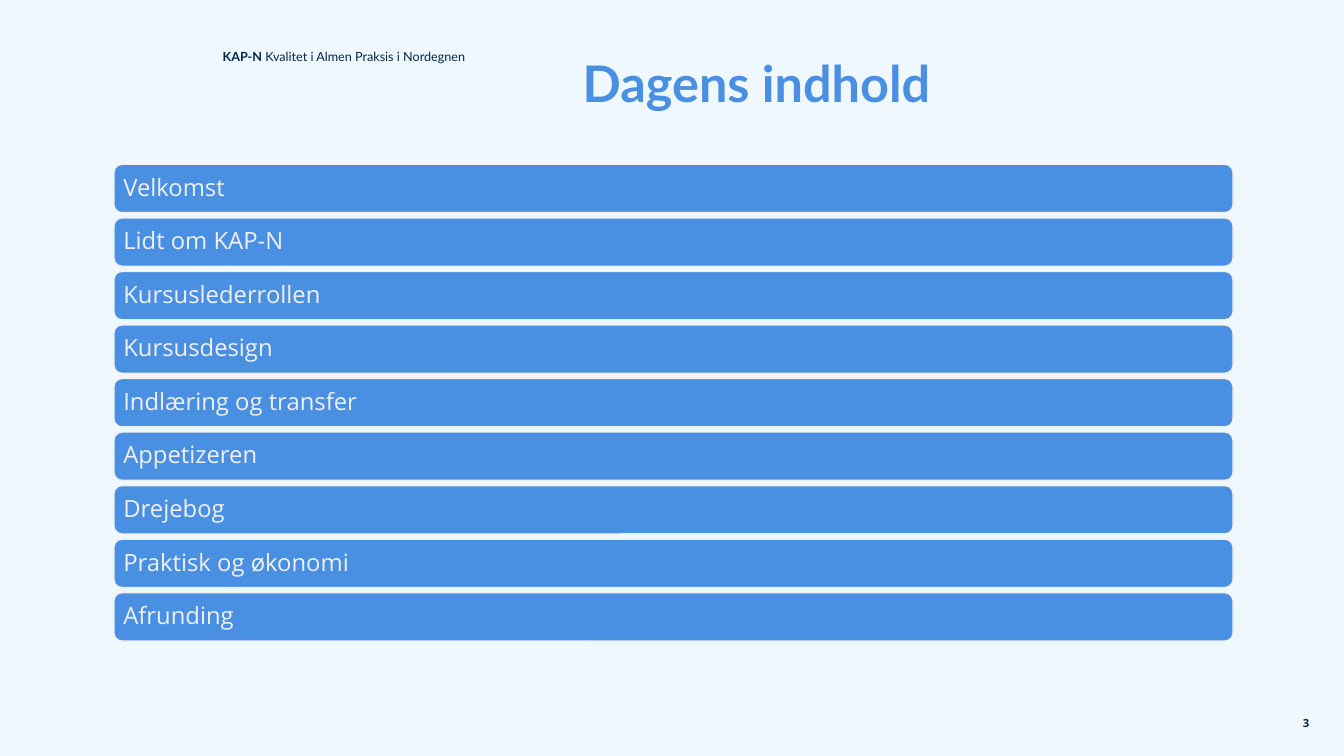
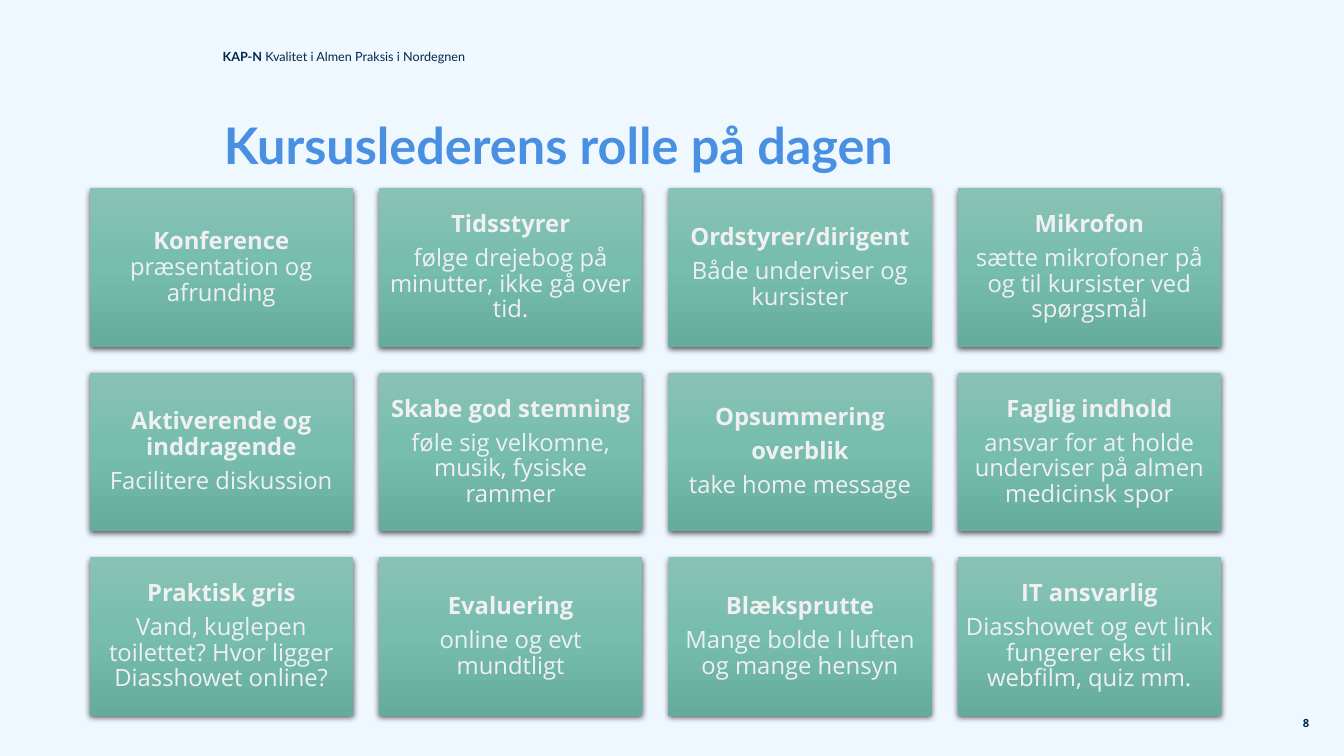
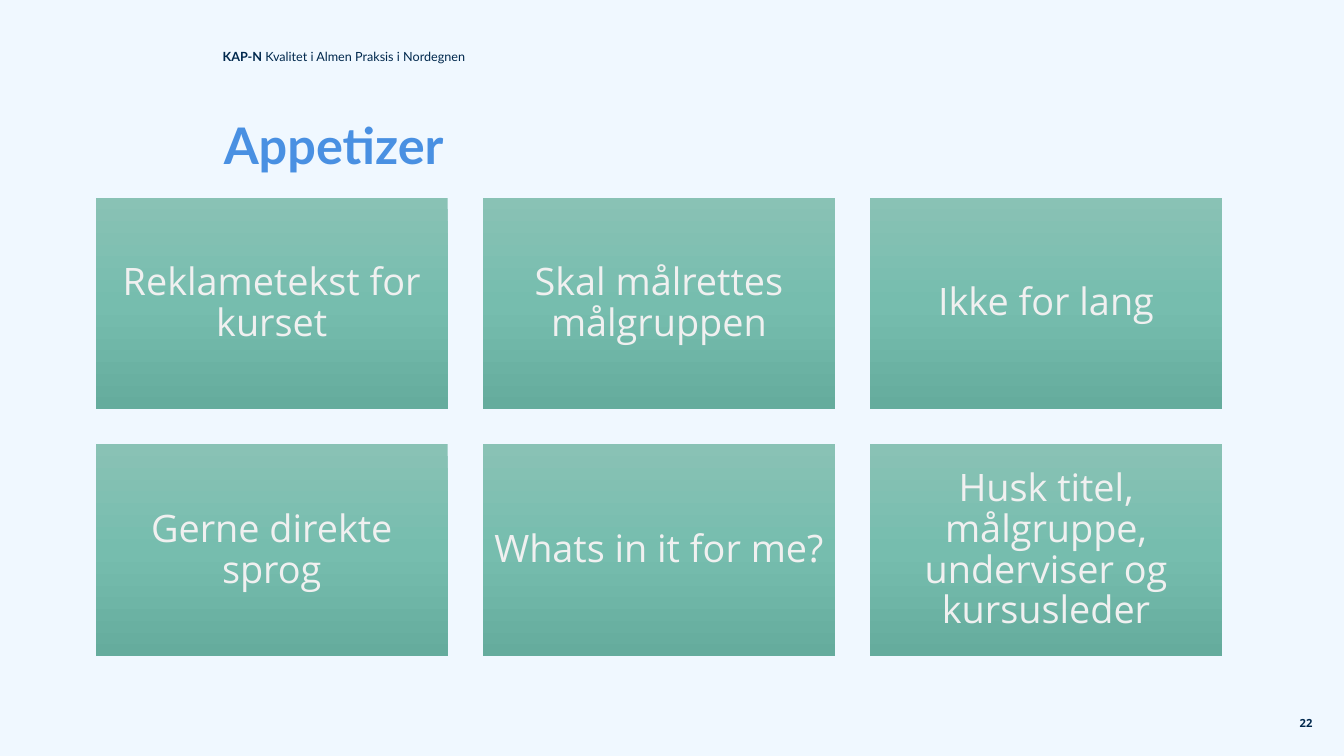
"""Build three course slides: agenda, the course leader's role and the appetizer."""
from copy import deepcopy

from pptx import Presentation
from pptx.dml.color import RGBColor
from pptx.enum.shapes import MSO_SHAPE as Shape
from pptx.enum.text import MSO_ANCHOR as Anchor, PP_ALIGN as Align
from pptx.oxml import parse_xml
from pptx.oxml.ns import nsdecls, qn
from pptx.util import Inches, Pt

AGENDA = ["Velkomst", "Lidt om KAP-N", "Kursuslederrollen", "Kursusdesign", "Indlæring og transfer",
          "Appetizeren", "Drejebog", "Praktisk og økonomi", "Afrunding"]
ROLES = [
    (["Tidsstyrer"], "følge drejebog på minutter, ikke gå over tid."),
    (["Ordstyrer/dirigent"], "Både underviser og kursister"),
    (["Mikrofon"], "sætte mikrofoner på og til kursister ved spørgsmål"),
    (["Aktiverende og inddragende"], "Facilitere diskussion"),
    (["Skabe god stemning"], "føle sig velkomne, musik, fysiske rammer"),
    (["Opsummering", "overblik"], "take home message"),
    (["Faglig indhold"], "ansvar for at holde underviser på almen medicinsk spor"),
    (["Praktisk gris"], "Vand, kuglepen toilettet? Hvor ligger Diasshowet online?"),
    (["Evaluering"], "online og evt mundtligt"),
    (["Blæksprutte"], "Mange bolde I luften og mange hensyn"),
    (["IT ansvarlig"], "Diasshowet og evt link fungerer eks til webfilm, quiz mm."),
]
TIPS = ["Reklametekst for kurset", "Skal målrettes målgruppen", "Ikke for lang",
        "Gerne direkte sprog", "Whats in it for me?",
        "Husk titel, målgruppe, underviser og kursusleder"]


def color(value):
    return RGBColor.from_string(value)


def bold(text):
    return text, True


def plain(text):
    return text, False


class Deck:
    BACKGROUND, NAVY, BLUE, LIGHT = "F0F8FF", "00284D", "4990E2", "F0F0F0"
    GRADIENT = [(0, "89C2B5"), (0.5, "76BDAE"), (1, "65AC9D")]
    HEADING_FONT, BODY_FONT = "Lato", "Open Sans"

    def __init__(self):
        self.presentation = Presentation()
        self.presentation.slide_width = Inches(13.33)
        self.presentation.slide_height = Inches(7.5)
        self.slide = None

    def add_slide(self, number, title, left=2.22, top=1.04):
        self.slide = self.presentation.slides.add_slide(self.presentation.slide_layouts[6])
        background = self.slide.background.fill
        background.solid()
        background.fore_color.rgb = color(self.BACKGROUND)
        self.add_text((2.11, 0.44, 4.92, 0.25),
                      [[bold("KAP-N"), plain(" Kvalitet i Almen Praksis i Nordegnen")]],
                      9, self.HEADING_FONT, self.NAVY)
        page = self.add_text((12.59, 6.97, 0.73, 0.4), [[bold(str(number))]],
                             8, self.BODY_FONT, self.NAVY, Align.CENTER)
        page.vertical_anchor = Anchor.MIDDLE
        heading = self.add_text((left, top, 7.5, 0.9), [[bold(title)]],
                                36, self.HEADING_FONT, self.BLUE, spacing=0.8)
        self.set_margins(heading, 0)
        heading.margin_top = Inches(0.21)

    def add_text(self, box, paragraphs, *style, **options):
        frame = self.slide.shapes.add_textbox(*map(Inches, box)).text_frame
        self.fill_frame(frame, paragraphs, *style, **options)
        return frame

    def fill_frame(self, frame, paragraphs, size, font, ink, align=Align.LEFT, spacing=1, after=0):
        frame.word_wrap = True
        for index, runs in enumerate(paragraphs):
            paragraph = frame.add_paragraph() if index else frame.paragraphs[0]
            paragraph.alignment = align
            paragraph.line_spacing = spacing
            paragraph.space_after = Pt(after)
            paragraph.font.size = Pt(size)
            paragraph.font.name = font
            paragraph.font.color.rgb = color(ink)
            weights = {weight for text, weight in runs}
            if len(weights) == 1:
                paragraph.font.bold = runs[0][1]
            for text, weight in runs:
                run = paragraph.add_run()
                run.text = text
                if len(weights) > 1:
                    run.font.bold = weight

    def set_margins(self, frame, margin):
        frame.margin_left = frame.margin_right = Inches(margin)
        frame.margin_top = frame.margin_bottom = Inches(margin)

    def add_panel(self, kind, box, paragraphs, size, align, margin):
        shape = self.slide.shapes.add_shape(kind, *map(Inches, box))
        shape.shadow.inherit = False
        frame = shape.text_frame
        frame.vertical_anchor = Anchor.MIDDLE
        self.set_margins(frame, margin)
        self.fill_frame(frame, paragraphs, size, self.BODY_FONT, self.LIGHT, align,
                        spacing=0.9, after=round(size * 0.35, 1))
        return shape

    def add_bar(self, box, text):
        bar = self.add_panel(Shape.ROUNDED_RECTANGLE, box, [[plain(text)]], 17, Align.LEFT, 0.07)
        bar.fill.solid()
        bar.fill.fore_color.rgb = color(self.BLUE)
        bar.line.color.rgb = color(self.LIGHT)
        bar.line.width = Pt(1)

    def add_card(self, box, paragraphs, size, margin, shadow=False):
        card = self.add_panel(Shape.RECTANGLE, box, paragraphs, size, Align.CENTER, margin)
        card.line.fill.background()
        card.fill.gradient()
        card.fill.gradient_angle = 270
        properties = card._element.spPr
        stops = properties.find(qn("a:gradFill")).find(qn("a:gsLst"))
        stops.insert(1, deepcopy(stops[0]))
        for stop, (position, value) in zip(card.fill.gradient_stops, self.GRADIENT):
            stop.position = position
            stop.color.rgb = color(value)
        if shadow:
            properties.find(qn("a:effectLst")).append(parse_xml(
                f'<a:outerShdw {nsdecls("a")} blurRad="{Pt(4.5)}" dist="{Pt(1.5)}" dir="5400000" '
                'algn="ctr" rotWithShape="0"><a:srgbClr val="000000"><a:alpha val="63000"/>'
                '</a:srgbClr></a:outerShdw>'))

    def add_card_grid(self, cards, columns, origin, card_size, gap, size, margin, shadow=False):
        left, top = origin
        width, height = card_size
        for index, paragraphs in enumerate(cards):
            row, column = divmod(index, columns)
            box = left + column * (width + gap), top + row * (height + gap), width, height
            self.add_card(box, paragraphs, size, margin, shadow)


def main():
    deck = Deck()

    deck.add_slide(3, "Dagens indhold", left=5.78, top=0.42)
    for index, topic in enumerate(AGENDA):
        deck.add_bar((1.13, 1.63 + index * 4.25 / (len(AGENDA) - 1), 11.1, 0.48), topic)

    deck.add_slide(8, "Kursuslederens rolle på dagen")
    roles = [[[bold("Konference"), plain(" præsentation og afrunding")]]]
    roles += [[[bold(heading)] for heading in headings] + [[plain(body)]]
              for headings, body in ROLES]
    deck.add_card_grid(roles, 4, (0.89, 1.87), (2.61, 1.57), 0.26, 17, 0.07, shadow=True)

    deck.add_slide(22, "Appetizer")
    deck.add_card_grid([[[plain(tip)]] for tip in TIPS], 3, (0.95, 1.96), (3.49, 2.1),
                       0.35, 27, 0.11)

    deck.presentation.save("out.pptx")


if __name__ == "__main__":
    main()
